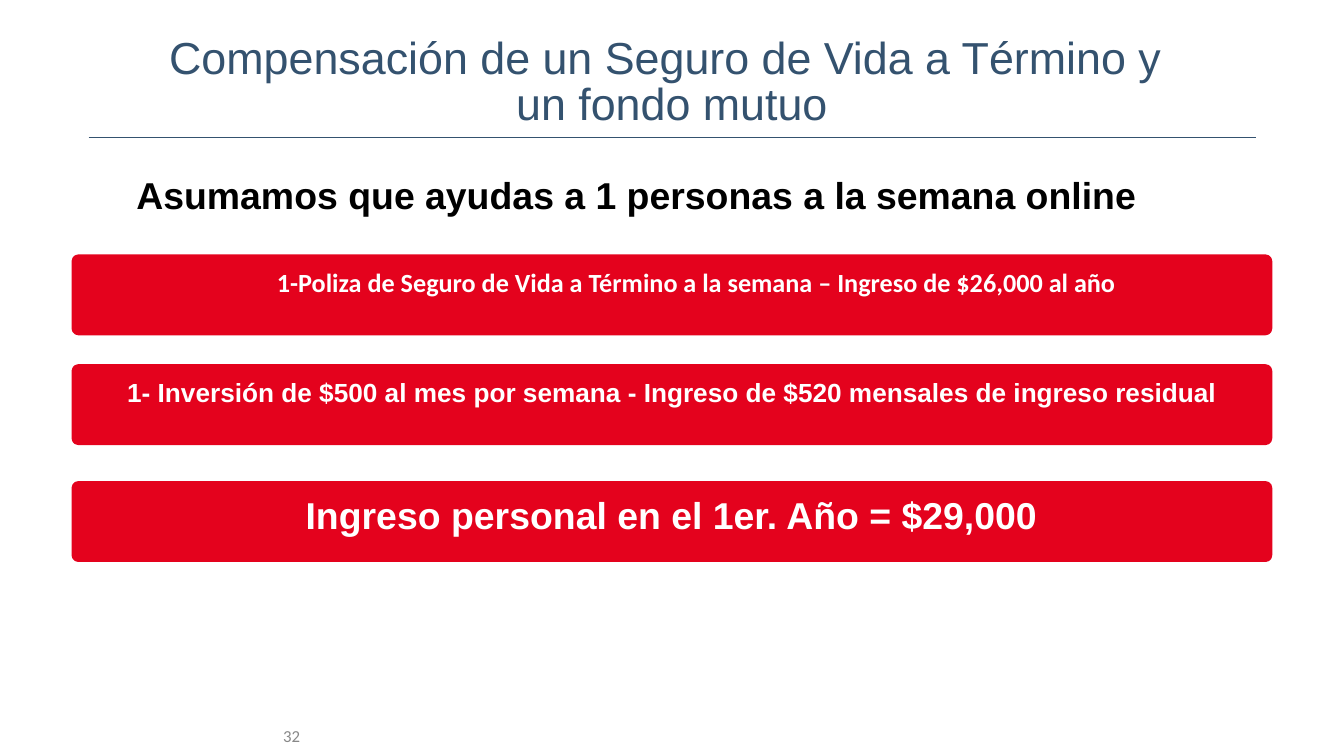
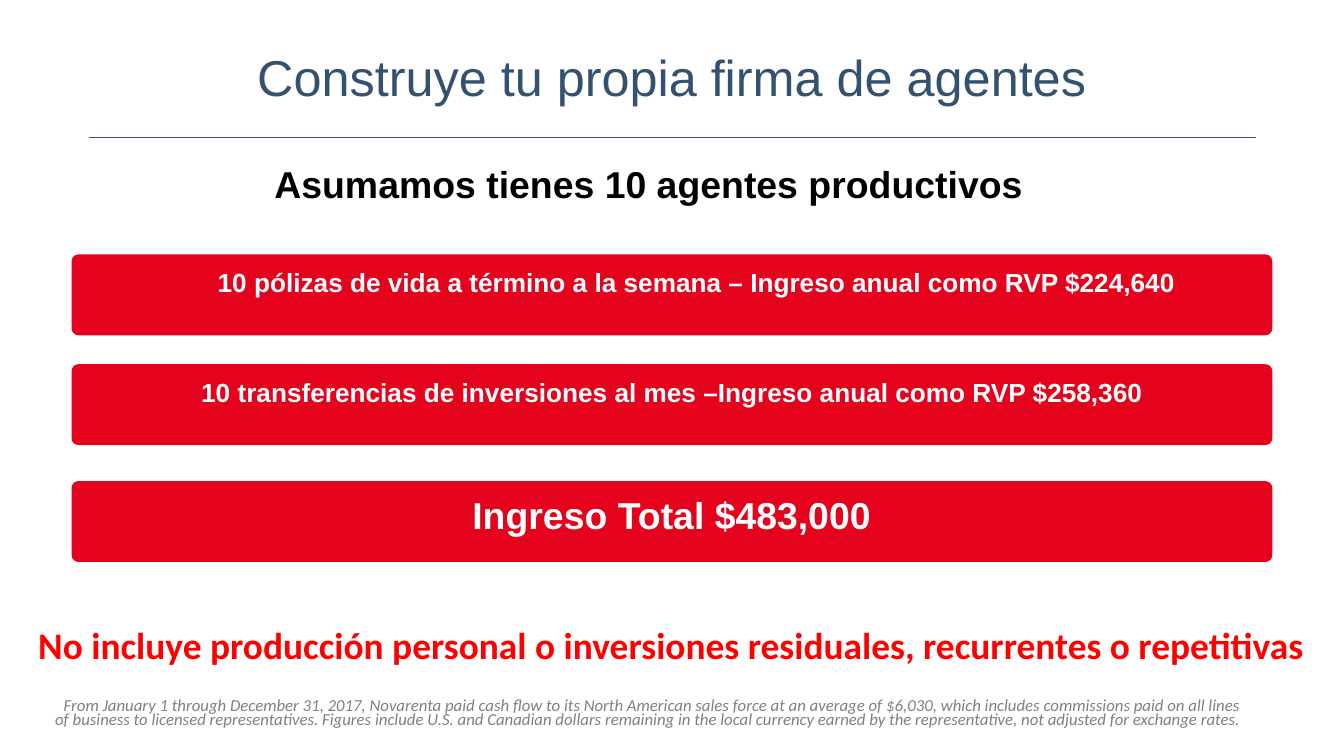
from dataclasses import dataclass

from lxml.etree import SubElement
from pptx import Presentation
from pptx.dml.color import RGBColor
from pptx.enum.shapes import MSO_CONNECTOR, MSO_SHAPE
from pptx.enum.text import MSO_ANCHOR, PP_ALIGN
from pptx.oxml.ns import qn
from pptx.util import Length, Pt

NAVY, RED, ALERT = "34526F", "E4021D", "FF0000"
WHITE, BLACK, GREY, NUMBER_GREY = "FFFFFF", "000000", "808080", "888888"
SLIDE_WIDTH, SLIDE_HEIGHT = 960, 540
SIDE_INSET, TOP_INSET = 9.6, 4.8
BAR_LEFT, BAR_WIDTH, BAR_HEIGHT = 52.7, 854.6, 54.7
RULE_LEFT, RULE_RIGHT, RULE_TOP = 63.4, 897.1, 97.9
TIGHT = 0.85


@dataclass(frozen=True)
class Area:
    left: float
    top: float
    width: float
    height: float


@dataclass(frozen=True)
class BarStyle:
    top: float
    size: float
    left_inset: float
    top_inset: float
    spacing: float


@dataclass(frozen=True)
class IncomePage:
    title: list[str]
    title_size: float
    title_area: Area
    premise: str
    premise_area: Area
    bars: list[str]
    first_bar_font: str = "Arial"


BAR_STYLES = [
    BarStyle(183.3, 18.7, 44.6, 8.5, 0.9),
    BarStyle(261.7, 18.7, SIDE_INSET, 6.4, 1),
    BarStyle(345.2, 26.7, SIDE_INSET, 5.7, 1),
]

PERSONAL = IncomePage(
    ["Compensación de un Seguro de Vida a Término y ", "un fondo mutuo"],
    32,
    Area(0, 22.3, SLIDE_WIDTH, 70.6),
    "Asumamos que ayudas a 1 personas a la semana online",
    Area(31.7, 123.1, 846.7, 44.6),
    [
        "1-Poliza de Seguro de Vida a Término a la semana – Ingreso de $26,000 al año",
        "1- Inversión de $500 al mes por semana - Ingreso de $520 mensales de ingreso residual",
        "Ingreso personal en el 1er. Año = $29,000",
    ],
    first_bar_font="Calibri",
)
AGENCY = IncomePage(
    ["Construye tu propia firma de agentes"],
    36,
    Area(31.7, 34.6, 896.4, 53.3),
    "Asumamos tienes 10 agentes productivos",
    Area(40.3, 115.2, 846.7, 44.6),
    [
        "10 pólizas de vida a término a la semana – Ingreso anual como RVP $224,640",
        "10 transferencias de inversiones al mes –Ingreso anual como RVP $258,360",
        "Ingreso Total $483,000",
    ],
)
CAUTION = "No incluye producción personal o inversiones residuales, recurrentes o repetitivas"
DISCLOSURE = (
    "From January 1 through December 31, 2017, Novarenta paid cash flow to its North American "
    "sales force at an average of $6,030, which includes commissions paid on all lines of business "
    "to licensed representatives. Figures include U.S. and Canadian dollars remaining in the local "
    "currency earned by the representative, not adjusted for exchange rates."
)


def colour(value: str) -> RGBColor:
    return RGBColor.from_string(value)


def write(shape, lines: list[str], *, size: float, ink: str, font: str = "Arial",
          bold: bool = False, italic: bool = False, align=PP_ALIGN.CENTER,
          anchor=MSO_ANCHOR.TOP, spacing: float | Length = 1,
          left_inset: float = SIDE_INSET, top_inset: float = TOP_INSET) -> None:
    """Fill a shape with one paragraph per line, all in the same format."""
    frame = shape.text_frame
    frame.word_wrap = True
    frame.vertical_anchor = anchor
    frame.margin_left, frame.margin_right = Pt(left_inset), Pt(SIDE_INSET)
    frame.margin_top, frame.margin_bottom = Pt(top_inset), Pt(TOP_INSET)
    for index, line in enumerate(lines):
        para = frame.add_paragraph() if index else frame.paragraphs[0]
        para.alignment = align
        para.line_spacing = spacing
        span = para.add_run()
        span.text = line
        span.font.name, span.font.size = font, Pt(size)
        span.font.bold, span.font.italic = bold, italic
        span.font.color.rgb = colour(ink)


def add_text(page, area: Area, lines: list[str], **style) -> None:
    box = page.shapes.add_textbox(Pt(area.left), Pt(area.top), Pt(area.width), Pt(area.height))
    write(box, lines, **style)


def add_bar(page, style: BarStyle, text: str, font: str) -> None:
    bar = page.shapes.add_shape(MSO_SHAPE.ROUNDED_RECTANGLE, Pt(BAR_LEFT), Pt(style.top),
                                Pt(BAR_WIDTH), Pt(BAR_HEIGHT))
    bar.adjustments[0] = 0.06
    bar.shadow.inherit = False
    bar.fill.solid()
    bar.fill.fore_color.rgb = colour(RED)
    bar.line.color.rgb = colour(RED)
    bar.line.width = Pt(3)
    write(bar, [text], size=style.size, ink=WHITE, font=font, bold=True, spacing=style.spacing,
          left_inset=style.left_inset, top_inset=style.top_inset)


def add_title_rule(page) -> None:
    rule = page.shapes.add_connector(MSO_CONNECTOR.STRAIGHT, Pt(RULE_LEFT), Pt(RULE_TOP),
                                     Pt(RULE_RIGHT), Pt(RULE_TOP))
    rule.line.color.rgb = colour(NAVY)
    rule.line.width = Pt(0.75)
    SubElement(rule._element.spPr, qn("a:effectLst"))


def add_income_page(deck, content: IncomePage):
    """Add a page with the shared title, rule, premise and three bars."""
    page = deck.slides.add_slide(deck.slide_layouts[6])
    add_text(page, content.title_area, content.title, size=content.title_size, ink=NAVY,
             spacing=TIGHT)
    add_title_rule(page)
    add_text(page, content.premise_area, [content.premise], size=26.7, ink=BLACK, bold=True,
             spacing=TIGHT)
    fonts = [content.first_bar_font, "Arial", "Arial"]
    for style, text, font in zip(BAR_STYLES, content.bars, fonts):
        add_bar(page, style, text, font)
    return page


def main() -> None:
    deck = Presentation()
    deck.slide_width, deck.slide_height = Pt(SLIDE_WIDTH), Pt(SLIDE_HEIGHT)

    personal = add_income_page(deck, PERSONAL)
    add_text(personal, Area(0, 511.2, 223.9, 28.8), ["32"], size=12, ink=NUMBER_GREY,
             font="Calibri", align=PP_ALIGN.RIGHT, anchor=MSO_ANCHOR.MIDDLE)

    agency = add_income_page(deck, AGENCY)
    add_text(agency, Area(0, 439.2, SLIDE_WIDTH, 46.8), [CAUTION], size=26.7, ink=ALERT,
             font="Calibri", bold=True, anchor=MSO_ANCHOR.MIDDLE, spacing=TIGHT)
    add_text(agency, Area(25.9, 496.1, 870.5, 28.8), [DISCLOSURE], size=12, ink=GREY,
             font="Calibri", italic=True, align=PP_ALIGN.RIGHT, anchor=MSO_ANCHOR.MIDDLE,
             spacing=Pt(10))

    deck.save("out.pptx")


if __name__ == "__main__":
    main()
